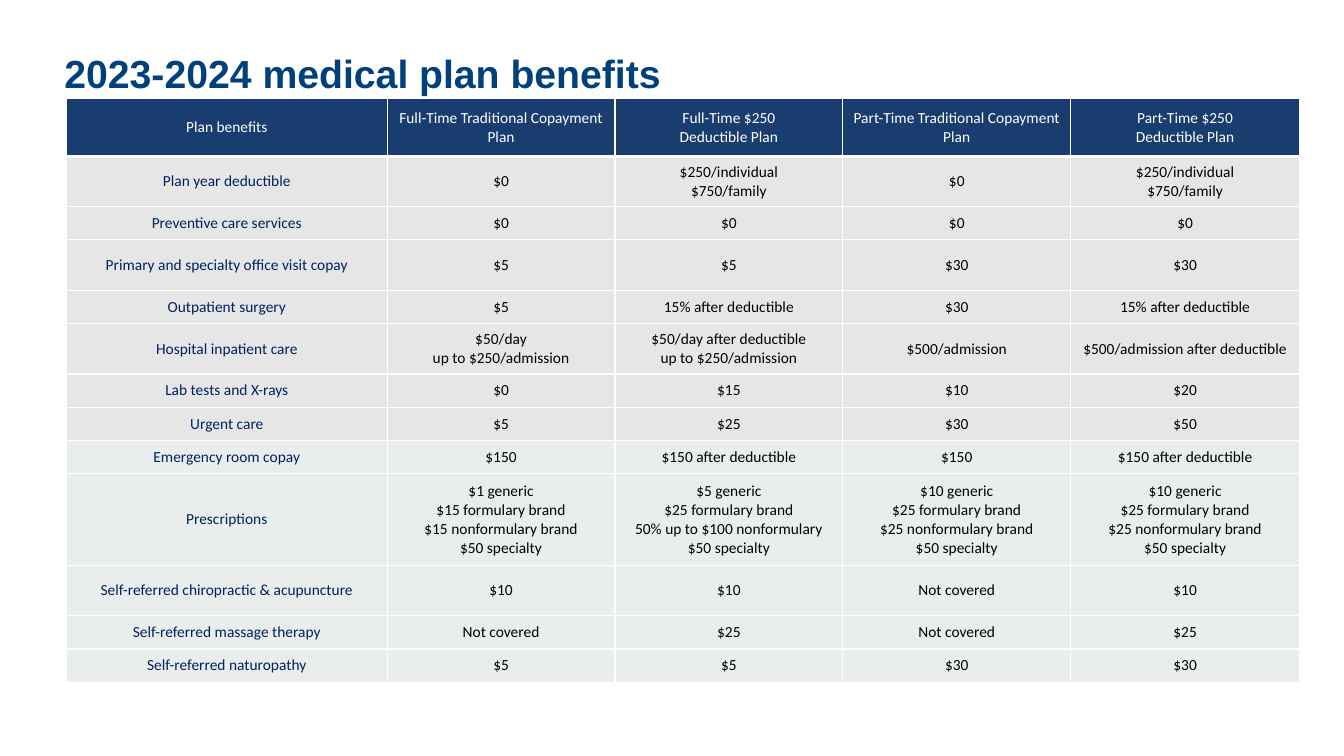
from lxml import etree
from pptx import Presentation
from pptx.dml.color import RGBColor
from pptx.enum import text
from pptx.oxml.ns import qn
from pptx.util import Inches, Pt

WHITE, NAVY, BLACK = "FFFFFF", "002060", "000000"
COLUMN_WIDTHS = [3.18, 2.26, 2.26, 2.26, 2.27]
ROW_HEIGHTS = [0.57, 0.5, 0.33, 0.5, 0.33, 0.5, 0.33, 0.33, 0.33, 0.91, 0.5, 0.33, 0.33]
FIRST_TINTED_ROW = 8
BENEFITS = [
    ["Plan benefits", "Full-Time Traditional Copayment Plan", "Full-Time $250\nDeductible Plan",
     "Part-Time Traditional Copayment Plan", "Part-Time $250\nDeductible Plan"],
    ["Plan year deductible", "$0", "$250/individual\n$750/family",
     "$0", "$250/individual\n$750/family"],
    ["Preventive care services", "$0", "$0", "$0", "$0"],
    ["Primary and specialty office visit copay", "$5", "$5", "$30", "$30"],
    ["Outpatient surgery", "$5", "15% after deductible", "$30", "15% after deductible"],
    ["Hospital inpatient care", "$50/day\nup to $250/admission",
     "$50/day after deductible\nup to $250/admission",
     "$500/admission", "$500/admission after deductible"],
    ["Lab tests and X-rays", "$0", "$15", "$10", "$20"],
    ["Urgent care", "$5", "$25", "$30", "$50"],
    ["Emergency room copay", "$150", "$150 after deductible", "$150", "$150 after deductible"],
    ["Prescriptions",
     "$1 generic\n$15 formulary brand\n$15 nonformulary brand\n$50 specialty",
     "$5 generic\n$25 formulary brand\n50% up to $100 nonformulary\n$50 specialty",
     "$10 generic\n$25 formulary brand\n$25 nonformulary brand\n$50 specialty",
     "$10 generic\n$25 formulary brand\n$25 nonformulary brand\n$50 specialty"],
    ["Self-referred chiropractic & acupuncture", "$10", "$10", "Not covered", "$10"],
    ["Self-referred massage therapy", "Not covered", "$25", "Not covered", "$25"],
    ["Self-referred naturopathy", "$5", "$5", "$30", "$30"],
]


def color(value):
    return RGBColor.from_string(value)


def write(frame, words, font, size, ink, bold=False, align=None, spacing=None):
    """Fill a text frame, one paragraph for each line."""
    frame.word_wrap = True
    for index, line in enumerate(words.split("\n")):
        para = frame.paragraphs[0] if index == 0 else frame.add_paragraph()
        para.alignment = align
        para.line_spacing = spacing
        span = para.add_run()
        span.text = line
        span.font.name = font
        span.font.size = Pt(size)
        span.font.bold = bold
        span.font.color.rgb = color(ink)


def set_borders(cell, **widths):
    """Draw white borders; widths in points by side, in the order L, R, T, B."""
    properties = cell._tc.get_or_add_tcPr()
    for index, (side, width) in enumerate(widths.items()):
        line = etree.Element(qn(f"a:ln{side}"), w=str(Pt(width)))
        fill = etree.SubElement(line, qn("a:solidFill"))
        etree.SubElement(fill, qn("a:srgbClr"), val=WHITE)
        properties.insert(index, line)


def add_title(page, left, top, width, height):
    box = page.shapes.add_textbox(Inches(left), Inches(top), Inches(width), Inches(height))
    box.text_frame.vertical_anchor = text.MSO_ANCHOR.BOTTOM
    write(box.text_frame, "2023-2024 medical plan benefits", "Arial", 28, "00417B",
          bold=True, spacing=0.9)


def add_benefits_table(page, left, top):
    table = page.shapes.add_table(
        len(ROW_HEIGHTS), len(COLUMN_WIDTHS), Inches(left), Inches(top),
        Inches(sum(COLUMN_WIDTHS)), Inches(sum(ROW_HEIGHTS))).table
    table.horz_banding = False
    for column, width in zip(table.columns, COLUMN_WIDTHS):
        column.width = Inches(width)
    for row_index, (row, height) in enumerate(zip(table.rows, ROW_HEIGHTS)):
        row.height = Inches(height)
        header = row_index == 0
        shade = "1A3D70" if header else "E6E6E6" if row_index < FIRST_TINTED_ROW else "E9EDEC"
        for column_index, cell in enumerate(row.cells):
            ink = WHITE if header else NAVY if column_index == 0 else BLACK
            cell.fill.solid()
            cell.fill.fore_color.rgb = color(shade)
            cell.vertical_anchor = text.MSO_ANCHOR.MIDDLE
            write(cell.text_frame, BENEFITS[row_index][column_index], "Calibri", 11, ink,
                  align=text.PP_ALIGN.CENTER)
            set_borders(cell, L=1, R=1, T=2.25 if row_index == 1 else 1,
                        B=2.25 if header else 1)


def main():
    deck = Presentation()
    deck.slide_width, deck.slide_height = Inches(13.33), Inches(7.5)
    page = deck.slides.add_slide(deck.slide_layouts[6])
    add_title(page, 0.54, 0.11, 8.17, 0.9)
    add_benefits_table(page, 0.66, 0.98)
    deck.save("out.pptx")


if __name__ == "__main__":
    main()
